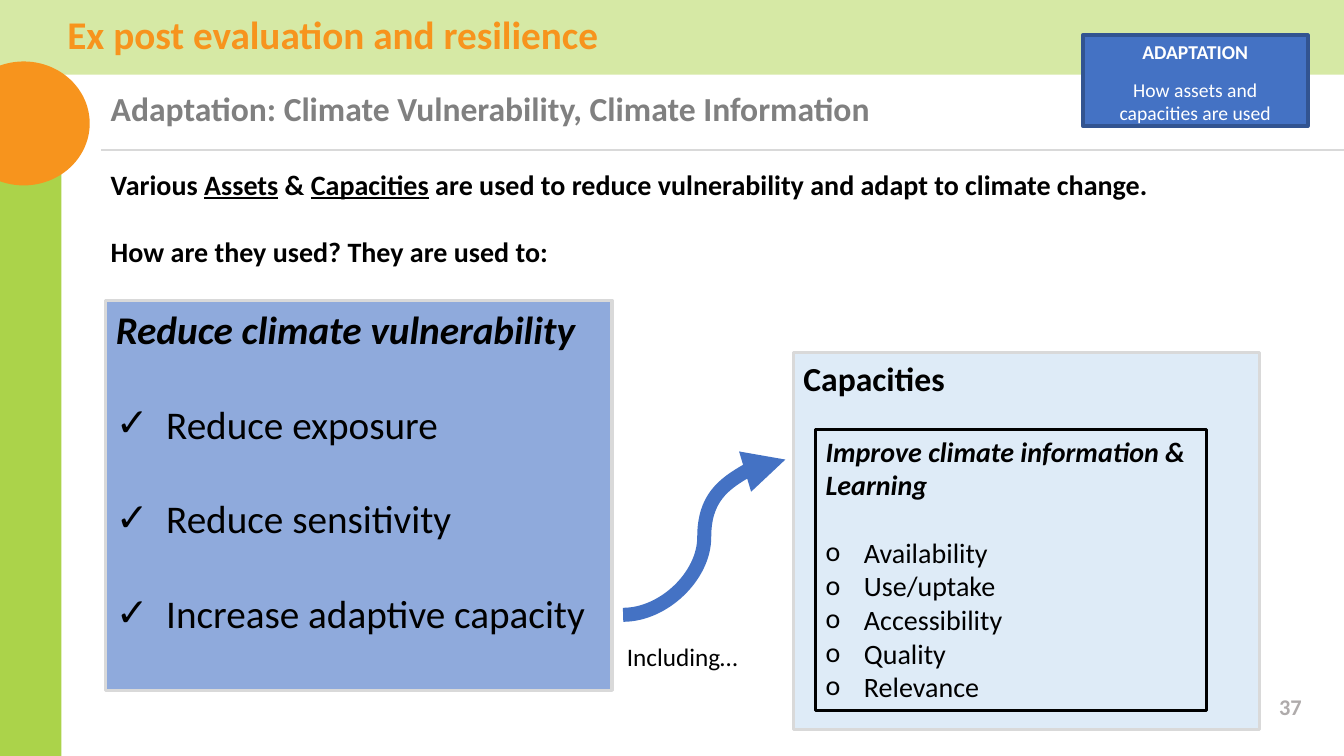
from pptx import Presentation
from pptx.dml.color import RGBColor
from pptx.enum.shapes import MSO_CONNECTOR, MSO_SHAPE
from pptx.enum.text import MSO_ANCHOR, PP_ALIGN
from pptx.oxml.ns import qn
from pptx.util import Pt
from lxml.etree import SubElement

PX = 9144
FONT = "Calibri"
BLACK = RGBColor(0x00, 0x00, 0x00)
WHITE = RGBColor(0xFF, 0xFF, 0xFF)
GREEN = RGBColor(0xAB, 0xD3, 0x4A)
PALE_GREEN = RGBColor(0xD6, 0xE9, 0xA5)
ORANGE = RGBColor(0xF7, 0x94, 0x1D)
BLUE = RGBColor(0x44, 0x72, 0xC4)
DARK_BLUE = RGBColor(0x32, 0x54, 0x91)
MID_BLUE = RGBColor(0x8F, 0xAA, 0xDC)
PALE_BLUE = RGBColor(0xDE, 0xEB, 0xF7)
LIGHT_GRAY = RGBColor(0xD9, 0xD9, 0xD9)
NUMBER_GRAY = RGBColor(0xAF, 0xAB, 0xAB)
GRAY = RGBColor(0x80, 0x80, 0x80)


def px(*lengths):
    """Turn pixel lengths into EMU."""
    return [length * PX for length in lengths]


def add_panel(slide, box, fill, line=None, width=2.25, preset=MSO_SHAPE.RECTANGLE):
    """Add a filled shape and return its text frame."""
    panel = slide.shapes.add_shape(preset, *px(*box))
    panel.shadow.inherit = False
    panel.fill.solid()
    panel.fill.fore_color.rgb = fill
    if line is None:
        panel.line.fill.background()
    else:
        panel.line.color.rgb = line
        panel.line.width = Pt(width)
    panel.text_frame.word_wrap = True
    panel.text_frame.vertical_anchor = MSO_ANCHOR.TOP
    return panel.text_frame


def add_label(slide, box, wrap=True, anchor=MSO_ANCHOR.TOP):
    """Add a text box and return its text frame."""
    frame = slide.shapes.add_textbox(*px(*box)).text_frame
    frame.word_wrap = wrap
    frame.vertical_anchor = anchor
    return frame


def write(frame, text, size, color=BLACK, bold=False, italic=False,
          align=PP_ALIGN.LEFT, before=0, spacing=None):
    """Write the next paragraph, underlining words between underscores."""
    first = not frame.text
    paragraph = frame.paragraphs[0] if first else frame.add_paragraph()
    paragraph.alignment = align
    if before:
        paragraph.space_before = Pt(before)
    if spacing:
        paragraph.line_spacing = spacing
    for index, part in enumerate(text.split("_")):
        run = paragraph.add_run()
        run.text = part
        run.font.name = FONT
        run.font.size = Pt(size)
        run.font.bold = bold
        run.font.italic = italic
        run.font.underline = index % 2 == 1
        run.font.color.rgb = color
    return paragraph


def write_bullets(frame, items, mark, size, indent, gaps):
    """Write bulleted items, each with its own space before."""
    for item, gap in zip(items, gaps):
        properties = write(frame, item, size, before=gap)._p.get_or_add_pPr()
        properties.set("marL", str(indent * PX))
        properties.set("indent", str(-indent * PX))
        SubElement(properties, qn("a:buFont")).set("typeface", FONT)
        SubElement(properties, qn("a:buChar")).set("char", mark)


def add_link(slide, kind, ends, color, width, arrow=False):
    """Add a connector, with an arrowhead at its end on request."""
    link = slide.shapes.add_connector(kind, *px(*ends))
    link.line.color.rgb = color
    link.line.width = Pt(width)
    if arrow:
        SubElement(link.line._get_or_add_ln(), qn("a:tailEnd")).set("type", "triangle")
    SubElement(link._element.spPr, qn("a:effectLst"))


def add_header(slide):
    """Draw the side band, the title band and both headings."""
    add_panel(slide, (0, 0, 61, 750), GREEN)
    add_panel(slide, (0, 0, 1333, 74), PALE_GREEN)
    add_panel(slide, (-42, 61, 131, 123), ORANGE, preset=MSO_SHAPE.OVAL)
    title = add_label(slide, (57, 11, 1054, 64))
    write(title, "Ex post evaluation and resilience", 28, ORANGE, True, spacing=0.9)
    subtitle = add_label(slide, (100, 87, 1233, 46))
    write(subtitle, "Adaptation: Climate Vulnerability, Climate Information",
          24, GRAY, True, spacing=0.9)
    add_link(slide, MSO_CONNECTOR.STRAIGHT, (100, 149, 1333, 149), LIGHT_GRAY, 1.5)
    adaptation = add_panel(slide, (1074, 35, 223, 90), BLUE, DARK_BLUE, 3)
    write(adaptation, "ADAPTATION", 14, WHITE, True, align=PP_ALIGN.CENTER)
    write(adaptation, "How assets and capacities are used", 14, WHITE,
          align=PP_ALIGN.CENTER, before=10)


def add_vulnerability(slide):
    """Draw the panel on reducing climate vulnerability."""
    vulnerability = add_panel(slide, (105, 298, 502, 387), MID_BLUE, LIGHT_GRAY)
    write(vulnerability, "Reduce climate vulnerability", 28, bold=True, italic=True)
    aims = ["Reduce exposure", "Reduce sensitivity", "Increase adaptive capacity"]
    write_bullets(vulnerability, aims, "✓", 28, 50, [34] * len(aims))


def add_capacities(slide):
    """Draw the capacities panel with the climate information box inside."""
    capacities = add_panel(slide, (787, 350, 462, 374), PALE_BLUE, LIGHT_GRAY)
    write(capacities, "Capacities", 24, bold=True)
    learning = add_panel(slide, (809, 426, 388, 279), PALE_BLUE, BLACK)
    write(learning, "Improve climate information & Learning", 20, bold=True, italic=True)
    qualities = ["Availability", "Use/uptake", "Accessibility", "Quality", "Relevance"]
    write_bullets(learning, qualities, "o", 20, 38, [24, 0, 0, 0, 0])


def main():
    """Build the slide and save it."""
    deck = Presentation()
    deck.slide_width, deck.slide_height = px(1333, 750)
    slide = deck.slides.add_slide(deck.slide_layouts[6])
    add_header(slide)
    intro = add_label(slide, (100, 161, 1090, 111))
    write(intro, "Various _Assets_ & _Capacities_ are used to reduce vulnerability "
          "and adapt to climate change.", 20, bold=True)
    write(intro, "How are they used? They are used to:", 20, bold=True, before=24)
    add_vulnerability(slide)
    add_capacities(slide)
    add_link(slide, MSO_CONNECTOR.CURVE, (618, 610, 779, 456), BLUE, 10, arrow=True)
    write(add_label(slide, (612, 631, 133, 40), wrap=False), "Including…", 18)
    number = add_label(slide, (1210, 681, 91, 40), anchor=MSO_ANCHOR.MIDDLE)
    write(number, "37", 16, NUMBER_GRAY, True, align=PP_ALIGN.RIGHT)
    deck.save("out.pptx")


if __name__ == "__main__":
    main()
